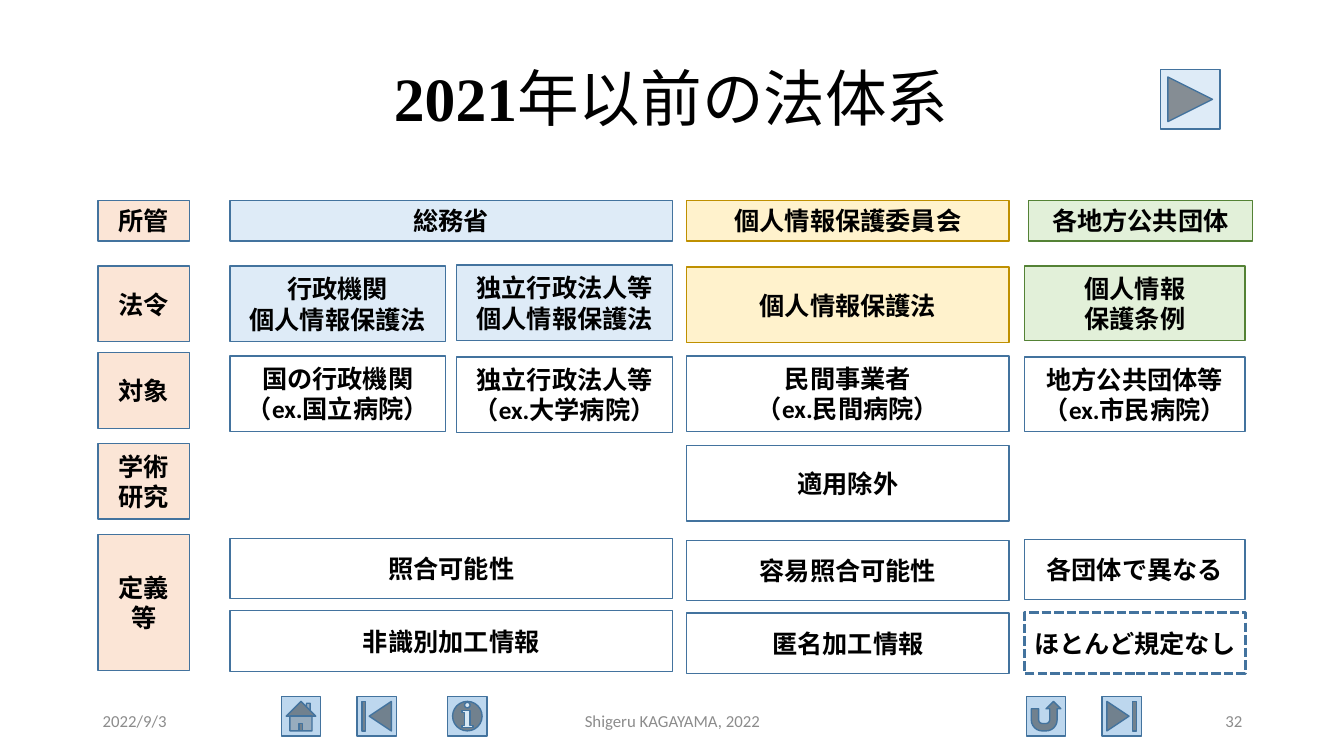
from dataclasses import dataclass

from pptx import Presentation
from pptx.dml.color import RGBColor
from pptx.enum.dml import MSO_LINE
from pptx.enum.shapes import MSO_SHAPE
from pptx.enum.text import MSO_ANCHOR, PP_ALIGN
from pptx.util import Inches, Pt

RECT = MSO_SHAPE.RECTANGLE
DASH = MSO_LINE.SQUARE_DOT
MIDDLE = MSO_ANCHOR.MIDDLE
LEFT, CENTER, RIGHT = PP_ALIGN.LEFT, PP_ALIGN.CENTER, PP_ALIGN.RIGHT


@dataclass(frozen=True)
class Theme:
    font: str = "Calibri"
    serif: str = "Times New Roman"
    title: int = 44
    body: int = 18
    small: int = 12
    ink: str = "000000"
    gray: str = "8C8C8C"
    edge: str = "43739E"
    button: str = "BDD7EE"
    peach: str = "FBE5D6"
    blue: str = "DEEBF7"
    gold: str = "FFF2CC"
    amber: str = "BF9000"
    mint: str = "E2F0D9"
    green: str = "548235"


theme = Theme()
deck = Presentation()
deck.slide_width, deck.slide_height = Inches(13.33), Inches(7.5)
slide = deck.slides.add_slide(deck.slide_layouts[6])


def add_box(kind, left, top, width, height, fill=None, edge=theme.edge):
    box = slide.shapes.add_shape(
        kind, Inches(left), Inches(top), Inches(width), Inches(height))
    box.shadow.inherit = False
    if fill:
        box.fill.solid()
        box.fill.fore_color.rgb = RGBColor.from_string(fill)
    else:
        box.fill.background()
    box.line.color.rgb = RGBColor.from_string(edge)
    box.line.width = Pt(1)
    return box


def set_text(shape, text, size, color, align=CENTER, bold=False):
    frame = shape.text_frame
    frame.word_wrap = True
    frame.vertical_anchor = MIDDLE
    frame.text = text
    for para in frame.paragraphs:
        para.alignment = align
        para.font.name = theme.font
        para.font.size = Pt(size)
        para.font.bold = bold
        para.font.color.rgb = RGBColor.from_string(color)


# Navigation buttons
buttons = [
    (MSO_SHAPE.ACTION_BUTTON_HOME, 2.79),
    (MSO_SHAPE.ACTION_BUTTON_BEGINNING, 3.54),
    (MSO_SHAPE.ACTION_BUTTON_INFORMATION, 4.44),
    (MSO_SHAPE.ACTION_BUTTON_RETURN, 10.18),
    (MSO_SHAPE.ACTION_BUTTON_END, 10.93),
]
for kind, left in buttons:
    add_box(kind, left, 6.91, 0.39, 0.39, theme.button)
add_box(MSO_SHAPE.ACTION_BUTTON_FORWARD_OR_NEXT, 11.51, 0.69, 0.59, 0.59, theme.blue)

# Title
title = slide.shapes.add_textbox(Inches(1.91), Inches(0.41), Inches(9.5), Inches(1.19))
title.text_frame.word_wrap = True
title.text_frame.vertical_anchor = MIDDLE
head = title.text_frame.paragraphs[0]
head.alignment = CENTER
head.line_spacing = 0.9
head.font.size = Pt(theme.title)
head.font.color.rgb = RGBColor.from_string(theme.ink)
for text, font, bold in [("2021", theme.serif, True), ("年", theme.serif, False),
                         ("以前の法体系", theme.font, False)]:
    run = head.add_run()
    run.text = text
    run.font.name = font
    run.font.bold = bold

# Footer
for text, left, width, align in [("2022/9/3", 0.92, 3, LEFT),
                                 ("Shigeru KAGAYAMA, 2022", 4.42, 4.5, CENTER),
                                 ("32", 9.42, 3, RIGHT)]:
    foot = slide.shapes.add_textbox(Inches(left), Inches(6.95), Inches(width), Inches(0.4))
    set_text(foot, text, theme.small, theme.gray, align)

# Columns: left, width
label = (0.97, 0.91)
state = (2.28, 4.39)
organ = (2.28, 2.14)
agency = (4.53, 2.14)
private = (6.81, 3.2)
local = (10.16, 2.19)

# Colour pairs: fill, edge
peach = (theme.peach, theme.edge)
blue = (theme.blue, theme.edge)
gold = (theme.gold, theme.amber)
mint = (theme.mint, theme.green)
plain = (None, theme.edge)

# Cells of the chart of laws: text, column, top, height, colours
cells = [
    ("所管", label, 1.99, 0.4, peach),
    ("総務省", state, 1.99, 0.4, blue),
    ("個人情報保護委員会", private, 1.99, 0.4, gold),
    ("各地方公共団体", (10.2, 2.22), 1.99, 0.4, mint),

    ("法令", label, 2.64, 0.75, peach),
    ("行政機関\n個人情報保護法", organ, 2.64, 0.75, blue),
    ("独立行政法人等\n個人情報保護法", agency, 2.63, 0.75, blue),
    ("個人情報保護法", private, 2.65, 0.75, gold),
    ("個人情報\n保護条例", local, 2.64, 0.74, mint),

    ("対象", label, 3.5, 0.75, peach),
    ("国の行政機関\n（ex.国立病院）", organ, 3.53, 0.75, plain),
    ("独立行政法人等\n（ex.大学病院）", agency, 3.54, 0.75, plain),
    ("民間事業者\n（ex.民間病院）", private, 3.53, 0.75, plain),
    ("地方公共団体等\n（ex.市民病院）", local, 3.54, 0.74, plain),

    ("学術\n研究", label, 4.4, 0.75, peach),
    ("適用除外", private, 4.42, 0.75, plain),

    ("定義等", label, 5.3, 1.35, peach),
    ("照合可能性", state, 5.34, 0.6, plain),
    ("容易照合可能性", private, 5.36, 0.6, plain),
    ("各団体で異なる", local, 5.35, 0.6, plain),
    ("非識別加工情報", state, 6.06, 0.6, plain),
    ("匿名加工情報", private, 6.08, 0.6, plain),
    ("ほとんど規定なし", local, 6.08, 0.6, plain),
]
for text, (left, width), top, height, (fill, edge) in cells:
    cell = add_box(RECT, left, top, width, height, fill, edge)
    cell.text_frame.margin_left = cell.text_frame.margin_right = Inches(0.09)
    set_text(cell, text, theme.body, theme.ink, bold=True)

# The last cell has a dashed edge
cell.line.width = Pt(2.25)
cell.line.dash_style = DASH

deck.save("out.pptx")
